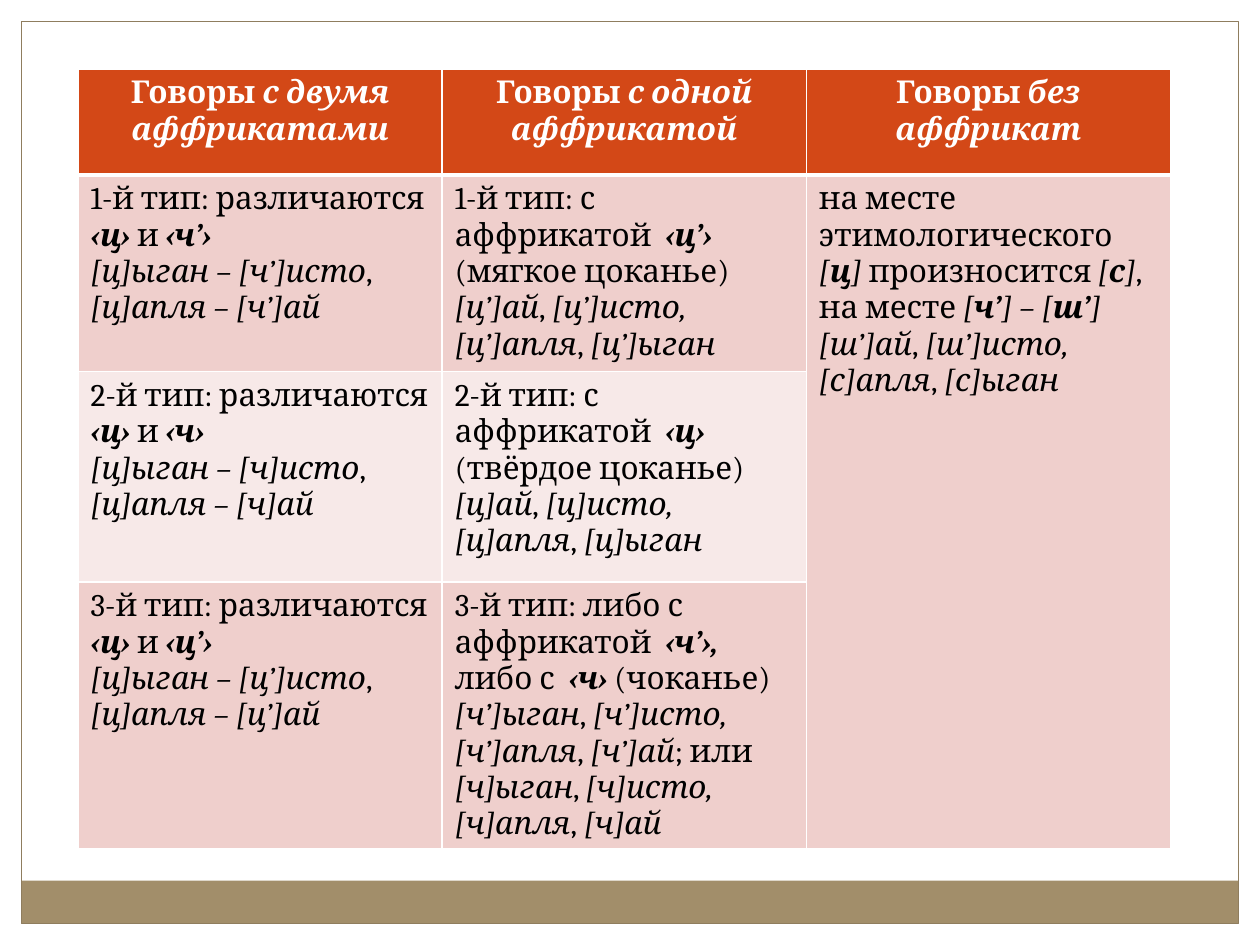
from lxml import etree
from pptx import Presentation
from pptx import util as u
from pptx.dml.color import RGBColor
from pptx.enum import shapes, text
from pptx.oxml.ns import qn

COLORS = {
    "white": "FFFFFF",
    "black": "000000",
    "band": "A28E6A",
    "frame": "8F7D5E",
    "header": "D34817",
    "odd_row": "EFCFCC",
    "even_row": "F7E9E8",
}
FONT = "Cambria"
ROW_HEIGHTS = [0.84, 1.56, 1.67, 1.91]

# In the cell texts "_" switches italic on and off, "*" switches bold.
HEADERS = ["*Говоры _с двумя аффрикатами", "*Говоры _с одной аффрикатой", "*Говоры _без аффрикат"]
TWO_AFFRICATES = [
    ["1-й тип: различаются_* ‹ц›_* и _*‹ч’›", "_[ц]ыган – [ч’]исто_,_ [ц]апля – [ч’]ай"],
    ["2-й тип: различаются_* ‹ц›_* и _*‹ч›", "_[ц]ыган – [ч]исто_, _[ц]апля – [ч]ай"],
    ["3-й тип: различаются_* ‹ц›_* и _*‹ц’›", "_[ц]ыган – [ц’]исто_, _[ц]апля – [ц’]ай"],
]
ONE_AFFRICATE = [
    ["1-й тип: с аффрикатой  _*‹ц’›_* (мягкое цоканье)",
     "_[ц’]ай_,_ [ц’]исто, [ц’]апля_,_ [ц’]ыган"],
    ["2-й тип: с аффрикатой  _*‹ц›_* (твёрдое цоканье)",
     "_[ц]ай_,_ [ц]исто, [ц]апля_,_ [ц]ыган"],
    ["3-й тип: либо с аффрикатой  _*‹ч’›, _*либо с  _*‹ч›_* (чоканье)",
     "_[ч’]ыган_,_ [ч’]исто, [ч’]апля_,_ [ч’]ай_; или_ [ч]ыган_, _[ч]исто, [ч]апля_,_ [ч]ай"],
]
NO_AFFRICATES = [
    "на месте этимологического _[*ц*]_ произносится _[*с*]_, на месте _[*ч’*] – [*ш’*]",
    "_[ш’]ай_,_ [ш’]исто, [с]апля_,_ [с]ыган",
]


def rgb(name):
    return RGBColor.from_string(COLORS[name])


def add_rect(slide, left, top, width, height, fill=None, line=None):
    rect = slide.shapes.add_shape(
        shapes.MSO_SHAPE.RECTANGLE, *map(u.Inches, (left, top, width, height)))
    rect.shadow.inherit = False
    if fill:
        rect.fill.solid()
        rect.fill.fore_color.rgb = rgb(fill)
    else:
        rect.fill.background()
    if line:
        rect.line.color.rgb = rgb(line)
        rect.line.width = u.Pt(0.75)
    else:
        rect.line.fill.background()


def add_page_frame(slide, width, height, margin=0.17, band=0.34):
    """White page margins, a bottom band and a thin outline around the page."""
    add_rect(slide, 0, 0, width, margin, "white")
    for left in (width - margin, 0):
        add_rect(slide, left, 0, margin, height, "white")
    inner_width = width - 2 * margin
    add_rect(slide, margin, height - margin - band, inner_width, band, "band")
    add_rect(slide, margin, margin, inner_width, height - 2 * margin, line="frame")


def add_marked_runs(paragraph, marked, color):
    for bold_index, bold_part in enumerate(marked.split("*")):
        italic_before = marked.split("*")[:bold_index]
        italic = "".join(italic_before).count("_") % 2 == 1
        for index, words in enumerate(bold_part.split("_")):
            if index:
                italic = not italic
            if not words:
                continue
            run = paragraph.add_run()
            run.text = words
            font = run.font
            font.name = FONT
            font.size = u.Pt(18)
            font.bold = bold_index % 2 == 1
            font.italic = italic
            font.color.rgb = rgb(color)


def set_borders(cell, row):
    widths = {"L": 1, "R": 1, "T": 3 if row == 1 else 1, "B": 3 if row == 0 else 1}
    properties = cell._tc.get_or_add_tcPr()
    for side, width in widths.items():
        border = etree.SubElement(properties, qn(f"a:ln{side}"), w=str(u.Pt(width)))
        fill = etree.SubElement(border, qn("a:solidFill"))
        etree.SubElement(fill, qn("a:srgbClr"), val=COLORS["white"])


def fill_cell(cell, paragraphs, color, align):
    for index, marked in enumerate(paragraphs):
        frame = cell.text_frame
        paragraph = frame.add_paragraph() if index else frame.paragraphs[0]
        paragraph.alignment = align
        add_marked_runs(paragraph, marked, color)


def add_dialect_table(slide, left, top, width):
    table = slide.shapes.add_table(
        len(ROW_HEIGHTS), len(HEADERS), u.Inches(left), u.Inches(top),
        u.Inches(width), u.Inches(sum(ROW_HEIGHTS))).table
    for column in table.columns:
        column.width = u.Inches(width / len(HEADERS))
    for row, height in enumerate(ROW_HEIGHTS):
        table.rows[row].height = u.Inches(height)
        background = "header" if row == 0 else "odd_row" if row % 2 else "even_row"
        for column in range(len(HEADERS)):
            cell = table.cell(row, column)
            set_borders(cell, row)
            cell.fill.solid()
            cell.fill.fore_color.rgb = rgb(background)

    table.cell(1, 2).merge(table.cell(3, 2))
    for column, header in enumerate(HEADERS):
        fill_cell(table.cell(0, column), [header], "white", text.PP_ALIGN.CENTER)
    for column, types in enumerate([TWO_AFFRICATES, ONE_AFFRICATE, [NO_AFFRICATES]]):
        for row, paragraphs in enumerate(types, start=1):
            fill_cell(table.cell(row, column), paragraphs, "black", text.PP_ALIGN.LEFT)


def main():
    deck = Presentation()
    deck.slide_width, deck.slide_height = u.Inches(10), u.Inches(7.5)
    slide = deck.slides.add_slide(deck.slide_layouts[6])
    add_page_frame(slide, 10, 7.5)
    add_dialect_table(slide, 0.62, 0.55, 8.67)
    deck.save("out.pptx")


if __name__ == "__main__":
    main()
